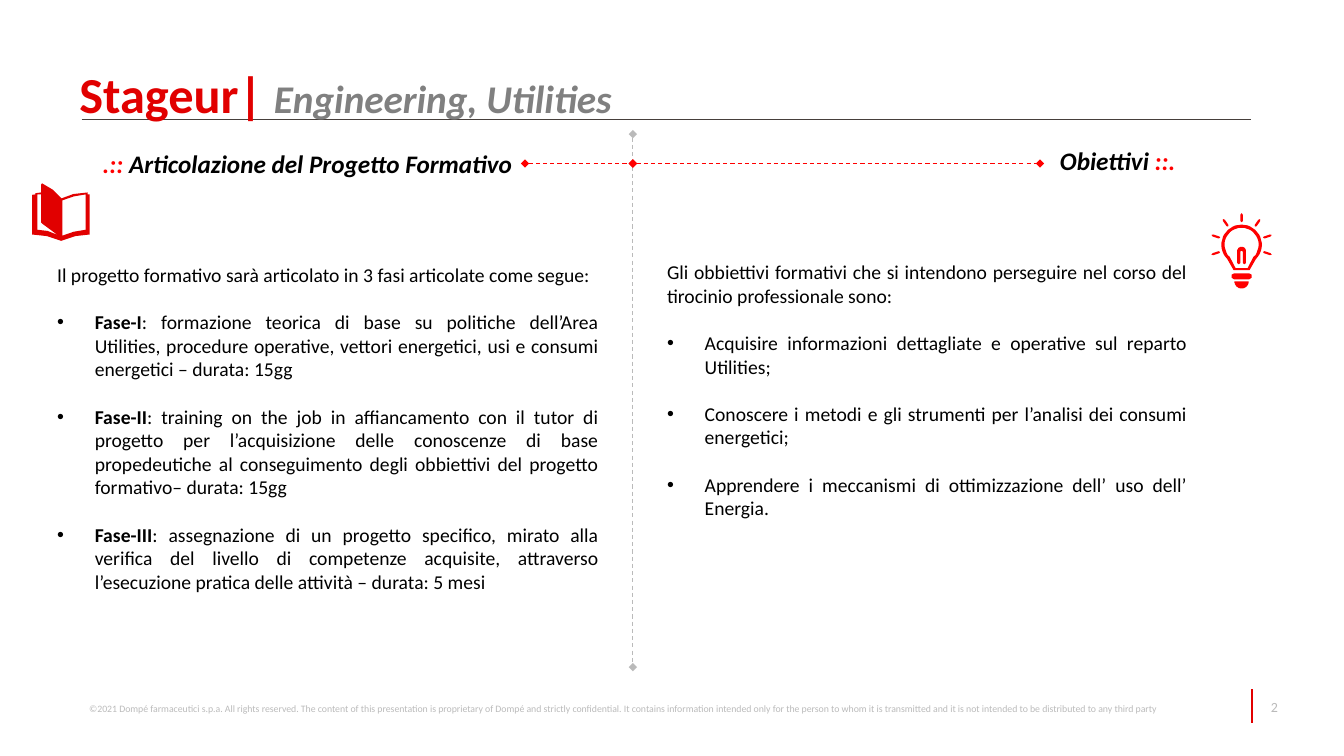
from math import cos, radians, sin

from lxml import etree
from pptx import Presentation
from pptx.dml.color import RGBColor
from pptx.enum.dml import MSO_LINE
from pptx.enum.shapes import MSO_CONNECTOR
from pptx.enum.text import MSO_ANCHOR, PP_ALIGN
from pptx.oxml.ns import qn
from pptx.util import Cm, Pt

STRAIGHT = MSO_CONNECTOR.STRAIGHT
DASH = MSO_LINE.DASH
TOP, MIDDLE = MSO_ANCHOR.TOP, MSO_ANCHOR.MIDDLE
LEFT, RIGHT, JUSTIFY = PP_ALIGN.LEFT, PP_ALIGN.RIGHT, PP_ALIGN.JUSTIFY

FONT = "Calibri"
BRAND_RED, BRIGHT_RED = "E10000", "FF0000"
BLACK, PALE_GREY = "000000", "BABABA"
HANGING = Cm(0.95)
DIVIDER_X, HEADING_Y = 15.95, 4.12

PHASES = [
    ("Fase-I", ": formazione teorica di base su politiche dell’Area Utilities, procedure operative, "
               "vettori energetici, usi e consumi energetici – durata: 15gg"),
    ("Fase-II", ": training on the job in affiancamento con il tutor di progetto per l’acquisizione "
                "delle conoscenze di base propedeutiche al conseguimento degli obbiettivi del "
                "progetto formativo– durata: 15gg"),
    ("Fase-III", ": assegnazione di un progetto specifico, mirato alla verifica del livello di "
                 "competenze acquisite, attraverso l’esecuzione pratica delle attività – durata: 5 mesi"),
]
GOALS = [
    "Acquisire informazioni dettagliate e operative sul reparto Utilities;",
    "Conoscere i metodi e gli strumenti per l’analisi dei consumi energetici;",
    "Apprendere i meccanismi di ottimizzazione dell’ uso dell’ Energia.",
]
FOOTER = ("©2021 Dompé farmaceutici s.p.a. All rights reserved. The content of this presentation is "
          "proprietary of Dompé and strictly confidential. It contains information intended only for "
          "the person to whom it is transmitted and it is not intended to be distributed to any third party")

BOOK = [
    [(154, 607), (190, 595), (226, 591), (226, 490), (221, 490), (221, 485), (185, 489),
     (155, 500), (133, 478), (106, 462), (104, 465), (104, 485), (89, 487), (89, 490),
     (81, 491), (81, 591), (118, 595)],
    [(94, 490), (104, 490), (104, 561), (107, 564), (145, 592), (120, 582), (94, 579)],
    [(216, 579), (186, 584), (157, 594), (157, 505), (186, 495), (216, 490)],
]
BULB_X, BULB_Y = 3129, 617


def colour(hex_code):
    return RGBColor.from_string(hex_code)


def add_run(paragraph, text, size=14, color=BLACK, bold=False, italic=False):
    run = paragraph.add_run()
    run.text = text
    font = run.font
    font.name, font.size, font.bold, font.italic = FONT, Pt(size), bold, italic
    font.color.rgb = colour(color)


def add_frame(slide, left, top, width, height, anchor=TOP):
    frame = slide.shapes.add_textbox(Cm(left), Cm(top), Cm(width), Cm(height)).text_frame
    frame.word_wrap = True
    frame.vertical_anchor = anchor
    return frame


def add_label(slide, place, runs, align=LEFT):
    paragraph = add_frame(slide, *place).paragraphs[0]
    paragraph.alignment = align
    for text, style in runs:
        add_run(paragraph, text, **style)


def add_bullet(frame):
    paragraph = frame.add_paragraph()
    paragraph.alignment = JUSTIFY
    paragraph.space_before = Pt(17)
    properties = paragraph._p.get_or_add_pPr()
    properties.set("marL", str(HANGING))
    properties.set("indent", str(-HANGING))
    etree.SubElement(properties, qn("a:buFont"), typeface="Arial")
    etree.SubElement(properties, qn("a:buChar"), char="•")
    return paragraph


def add_column(slide, place, intro, items):
    frame = add_frame(slide, *place)
    frame.paragraphs[0].alignment = JUSTIFY
    add_run(frame.paragraphs[0], intro)
    for lead, rest in items:
        bullet = add_bullet(frame)
        if lead:
            add_run(bullet, lead, bold=True)
        add_run(bullet, rest)


def add_line(slide, start, end, color, width, diamonds=False):
    connector = slide.shapes.add_connector(STRAIGHT, *map(Cm, start + end))
    connector.line.color.rgb = colour(color)
    connector.line.width = Pt(width)
    if diamonds:
        connector.line.dash_style = DASH
        for tip in ("a:headEnd", "a:tailEnd"):
            etree.SubElement(connector.line._ln, qn(tip), type="diamond")
    etree.SubElement(connector._element.spPr, qn("a:effectLst"))


def add_icon(slide, contours, color):
    first, *others = contours
    builder = slide.shapes.build_freeform(*first[0], scale=Cm(0.01))
    builder.add_line_segments(first[1:], close=True)
    for contour in others:
        builder.move_to(*contour[0])
        builder.add_line_segments(contour[1:], close=True)
    icon = builder.convert_to_shape()
    icon.shadow.inherit = False
    icon.fill.solid()
    icon.fill.fore_color.rgb = colour(color)
    icon.line.fill.background()


def arc(radius, start, end, center_y=BULB_Y, steps=32):
    angles = [radians(start + (end - start) * i / steps) for i in range(steps + 1)]
    return [(BULB_X + radius * cos(a), center_y - radius * sin(a)) for a in angles]


def glass(radius, neck_half, neck_y):
    return arc(radius, -45, 225) + [(BULB_X - neck_half, neck_y), (BULB_X + neck_half, neck_y)]


def ray(angle):
    along, across = cos(radians(angle)), sin(radians(angle))
    profile = [(57, 0), (60, 3), (76, 3), (80, 0), (76, -3), (60, -3)]
    return [(BULB_X + r * along + w * across, BULB_Y - r * across + w * along)
            for r, w in profile]


def bulb():
    filament = arc(11, 0, 180, 633) + [(BULB_X - 11, 663), (BULB_X - 7, 666), (BULB_X - 3, 663)]
    filament += arc(3, 180, 0, 635) + [(BULB_X + 3, 663), (BULB_X + 7, 666), (BULB_X + 11, 663)]
    collar = [(BULB_X + x, y) for x, y in
              [(-19, 689), (19, 689), (25, 692), (25, 700), (19, 704),
               (-19, 704), (-25, 700), (-25, 692)]]
    cap = arc(18, 180, 360, 709)
    rays = [ray(angle) for angle in range(-18, 199, 36)]
    return [glass(51, 20, 681), glass(43, 15, 676), filament, collar, cap] + rays


def main():
    deck = Presentation()
    deck.slide_width, deck.slide_height = Cm(33.87), Cm(19.05)
    slide = deck.slides.add_slide(deck.slide_layouts[6])

    add_line(slide, (31.55, 17.37), (31.55, 18.21), "E20000", 1)
    add_label(slide, (2, 17.58, 29.16, 0.58), [(FOOTER, dict(size=7, color="BBBBBB"))])
    add_label(slide, (31.78, 17.48, 1.96, 0.69), [("2", dict(size=10, color=PALE_GREY))])

    add_line(slide, (2.06, 3), (31.52, 3), "463F3B", 0.5)
    title = add_frame(slide, 2, 1.3, 27.89, 2.11, MIDDLE)
    title.margin_left = 0
    add_run(title.paragraphs[0], "Stageur| ", size=36, color=BRAND_RED, bold=True)
    add_run(title.paragraphs[0], "Engineering, Utilities", size=28, color="808080",
            bold=True, italic=True)

    add_line(slide, (DIVIDER_X, 3.38), (DIVIDER_X, 16.81), PALE_GREY, 0.75, diamonds=True)
    heading = dict(size=18, bold=True, italic=True)
    accent = dict(heading, color=BRIGHT_RED)
    add_label(slide, (2.34, 3.61, 13.26, 1.02),
              [(".:: ", accent), ("Articolazione del Progetto Formativo", heading)])
    add_label(slide, (17.83, 3.53, 12.04, 1.02),
              [("Obiettivi ", heading), ("::.", accent)], align=RIGHT)
    for start, end in [(13.23, DIVIDER_X), (DIVIDER_X, 26.21)]:
        add_line(slide, (start, HEADING_Y), (end, HEADING_Y), BRIGHT_RED, 0.75, diamonds=True)

    add_column(slide, (1.19, 6.5, 14.15, 10),
               "Il progetto formativo sarà articolato in 3 fasi articolate come segue:", PHASES)
    add_column(slide, (16.56, 6.43, 13.61, 7.62),
               "Gli obbiettivi formativi che si intendono perseguire nel corso del "
               "tirocinio professionale sono:", [("", goal) for goal in GOALS])
    add_icon(slide, BOOK, BRAND_RED)
    add_icon(slide, bulb(), BRIGHT_RED)

    deck.save("out.pptx")


if __name__ == "__main__":
    main()
